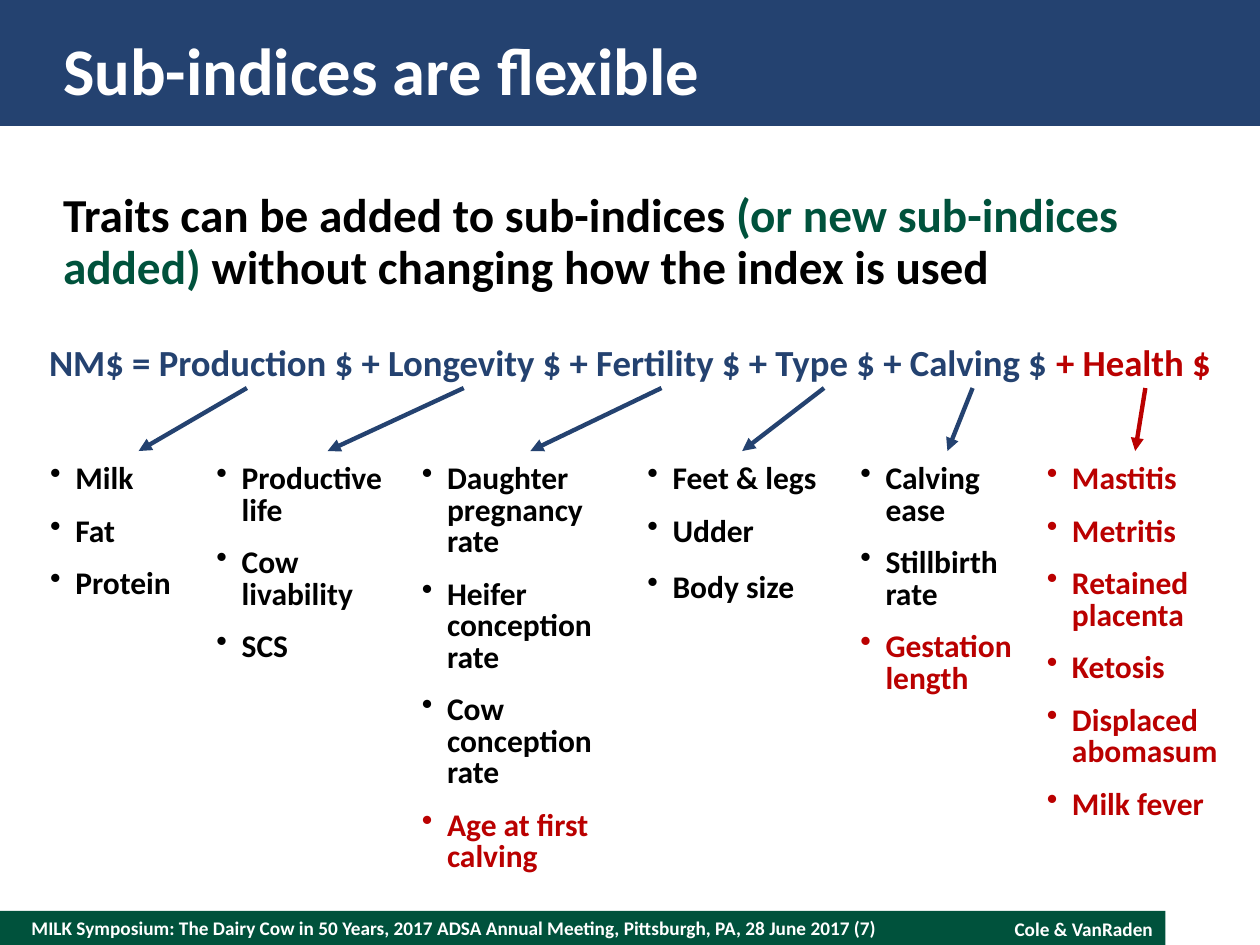
import dataclasses

import pptx
import pptx.dml.color
import pptx.enum.shapes
import pptx.enum.text
import pptx.oxml.ns
import pptx.util
from lxml import etree

Pt = pptx.util.Pt
RGBColor = pptx.dml.color.RGBColor
ALIGN = pptx.enum.text.PP_ALIGN
ANCHOR = pptx.enum.text.MSO_ANCHOR

NAVY = RGBColor(0x24, 0x42, 0x70)
GREEN = RGBColor(0x00, 0x52, 0x3C)
RED = RGBColor(0xBA, 0x00, 0x00)
BLACK = RGBColor(0x00, 0x00, 0x00)
WHITE = RGBColor(0xFF, 0xFF, 0xFF)
FONT = "Calibri"

LIST_TOP = 262
ARROW_TOP, ARROW_BOTTOM = 221.75, 257.75
BULLET_INDENT = 14.4


@dataclasses.dataclass
class SubIndex:
    """One term of the index: its trait list and the arrow leading to it."""
    left: float
    arrow_from: float
    arrow_to: float
    traits: tuple
    new_traits: tuple = ()
    arrow_color: RGBColor = NAVY
    width: float = 115.2
    last_spacing: float = 18


SUB_INDICES = [
    SubIndex(21.6, 141.1, 79.2, ("Milk", "Fat", "Protein")),
    SubIndex(116.65, 265, 187.2, ("Productive life", "Cow livability", "SCS")),
    SubIndex(234, 378, 303.1,
             ("Daughter pregnancy rate", "Heifer conception rate",
              "Cow conception rate"),
             ("Age at first calving",)),
    SubIndex(362.9, 470.9, 424.1, ("Feet & legs", "Udder", "Body size"),
             last_spacing=20),
    SubIndex(484.55, 555.8, 541.4, ("Calving ease", "Stillbirth rate"),
             ("Gestation length",), width=108),
    SubIndex(591.1, 654.5, 648.7, (),
             ("Mastitis", "Metritis", "Retained placenta", "Ketosis",
              "Displaced abomasum", "Milk fever"), arrow_color=RED),
]


def place(shape, left, top, width, height):
    shape.left, shape.top = Pt(left), Pt(top)
    shape.width, shape.height = Pt(width), Pt(height)


def format_run(run, size, color):
    run.font.name = FONT
    run.font.size = Pt(size)
    run.font.bold = True
    run.font.color.rgb = color


def add_runs(paragraph, size, pieces):
    for text, color in pieces:
        run = paragraph.add_run()
        run.text = text
        format_run(run, size, color)


def set_margins(frame, horizontal, vertical):
    frame.margin_left = frame.margin_right = Pt(horizontal)
    frame.margin_top = frame.margin_bottom = Pt(vertical)


def set_bullet(paragraph, indent, character=None):
    """Hang the paragraph by indent; no character means no bullet."""
    properties = paragraph._p.get_or_add_pPr()
    properties.set("marL", str(Pt(indent)))
    properties.set("indent", str(-Pt(indent)))
    tag = "a:buChar" if character else "a:buNone"
    bullet = etree.SubElement(properties, pptx.oxml.ns.qn(tag))
    if character:
        bullet.set("char", character)


def add_band(slide, left, top, width, height, color):
    band = slide.shapes.add_shape(
        pptx.enum.shapes.MSO_SHAPE.RECTANGLE,
        Pt(left), Pt(top), Pt(width), Pt(height))
    band.shadow.inherit = False
    band.fill.solid()
    band.fill.fore_color.rgb = color
    band.line.fill.background()


def add_text(slide, left, top, width, height, size, pieces,
             align=ALIGN.LEFT, anchor=ANCHOR.TOP, margins=(0, 0)):
    box = slide.shapes.add_textbox(Pt(left), Pt(top), Pt(width), Pt(height))
    frame = box.text_frame
    frame.word_wrap = True
    frame.vertical_anchor = anchor
    set_margins(frame, *margins)
    frame.paragraphs[0].alignment = align
    add_runs(frame.paragraphs[0], size, pieces)


def fill_title(title, text):
    place(title, 36, 14.4, 648, 50.4)
    frame = title.text_frame
    frame.auto_size = pptx.enum.text.MSO_AUTO_SIZE.NONE
    frame.vertical_anchor = ANCHOR.MIDDLE
    set_margins(frame, 0, 0)
    frame.text = text
    frame.paragraphs[0].alignment = ALIGN.LEFT
    format_run(frame.paragraphs[0].runs[0], 38, WHITE)


def fill_body(body, pieces):
    place(body, 36, 108, 648, 378)
    frame = body.text_frame
    frame.auto_size = pptx.enum.text.MSO_AUTO_SIZE.NONE
    set_margins(frame, 0, 0)
    paragraph = frame.paragraphs[0]
    set_bullet(paragraph, 0)
    paragraph.line_spacing = Pt(30)
    paragraph.space_before = Pt(0)
    paragraph.space_after = Pt(12)
    add_runs(paragraph, 27, pieces)


def add_trait_list(slide, sub_index):
    box = slide.shapes.add_textbox(
        Pt(sub_index.left), Pt(LIST_TOP), Pt(sub_index.width), Pt(216))
    frame = box.text_frame
    frame.word_wrap = True
    traits = sub_index.traits + sub_index.new_traits
    for number, trait in enumerate(traits):
        paragraph = frame.add_paragraph() if number else frame.paragraphs[0]
        paragraph.text = trait
        set_bullet(paragraph, BULLET_INDENT, "•")
        paragraph.line_spacing = Pt(18)
        paragraph.space_after = Pt(12)
        color = RED if trait in sub_index.new_traits else BLACK
        format_run(paragraph.runs[0], 18, color)
    paragraph.line_spacing = Pt(sub_index.last_spacing)


def add_arrow(slide, sub_index):
    arrow = slide.shapes.add_connector(
        pptx.enum.shapes.MSO_CONNECTOR.STRAIGHT,
        Pt(sub_index.arrow_from), Pt(ARROW_TOP),
        Pt(sub_index.arrow_to), Pt(ARROW_BOTTOM))
    arrow.line.color.rgb = sub_index.arrow_color
    arrow.line.width = Pt(2.5)
    qn = pptx.oxml.ns.qn
    etree.SubElement(arrow.line._get_or_add_ln(), qn("a:tailEnd"),
                     type="triangle")
    etree.SubElement(arrow._element.spPr, qn("a:effectLst"))


def main():
    presentation = pptx.Presentation()
    presentation.slide_width, presentation.slide_height = Pt(720), Pt(540)
    slide = presentation.slides.add_slide(presentation.slide_layouts[1])
    title, body = slide.placeholders

    add_band(slide, 0, 520.5, 666, 19.5, GREEN)
    add_band(slide, 0, 0, 720, 72, NAVY)
    add_text(slide, 18, 520.5, 504, 19.5, 11,
             [("MILK Symposium: The Dairy Cow in 50 Years, 2017 ADSA Annual "
               "Meeting, Pittsburgh, PA, 28 June 2017 (7)", WHITE)],
             anchor=ANCHOR.MIDDLE)
    add_text(slide, 522, 520.5, 144, 20.6, 11, [("Cole & VanRaden", WHITE)],
             align=ALIGN.RIGHT, margins=(7.2, 3.6))

    fill_title(title, "Sub-indices are flexible")
    fill_body(body, [("Traits can be added to sub-indices ", BLACK),
                     ("(or new sub-indices added)", GREEN),
                     (" without changing how the index is used", BLACK)])
    for placeholder in (title, body):  # bring the text in front of the bands
        slide.shapes._spTree.append(placeholder._element)

    add_text(slide, 21.6, 190.8, 676.8, 32.4, 21,
             [("NM$ = Production $ + Longevity $ + Fertility $ + Type $ "
               "+ Calving $", NAVY), (" + Health $", RED)],
             align=ALIGN.CENTER, margins=(0, 3.6))
    for sub_index in SUB_INDICES:
        add_trait_list(slide, sub_index)
        add_arrow(slide, sub_index)

    presentation.save("out.pptx")


if __name__ == "__main__":
    main()
